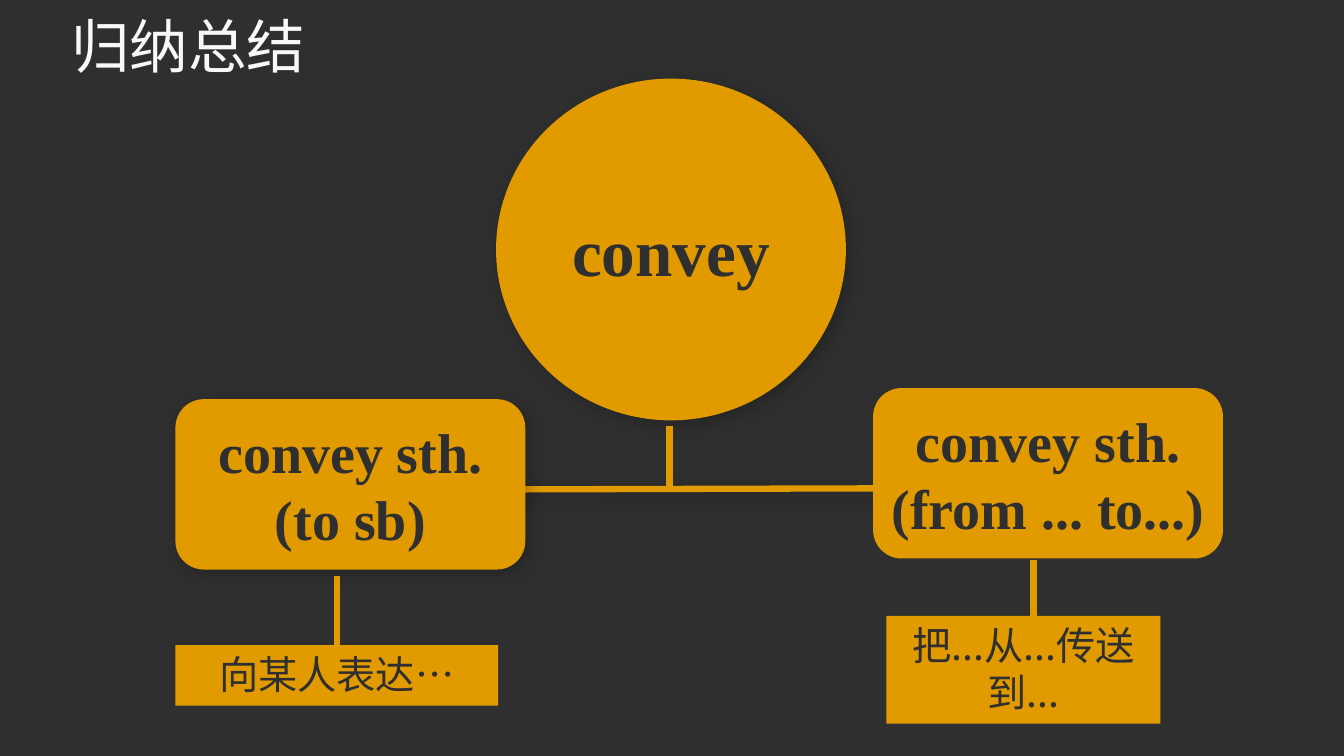
from lxml.etree import SubElement
from pptx import Presentation
from pptx.dml.color import RGBColor
from pptx.enum.shapes import MSO_CONNECTOR as CONN, MSO_SHAPE as SHAPE
from pptx.enum.text import MSO_ANCHOR as ANCHOR, MSO_AUTO_SIZE as AUTO, PP_ALIGN as ALIGN
from pptx.oxml.ns import qn
from pptx.util import Emu, Pt

PX = 9144  # 100 px to the inch
DARK, AMBER, PALE = "2F2F2F", "E19B01", "F8F8F8"
SANS, SERIF = "Noto Sans CJK SC", "Times New Roman"
HEADING = {"name": SANS, "size": Pt(41.8)}
TOPIC = {"name": SERIF, "size": Pt(48), "bold": True}
PHRASE = {"name": SERIF, "size": Pt(40), "bold": True}
MEANING = {"name": SANS, "size": Pt(28)}


def px(*lengths):
    return [Emu(n * PX) for n in lengths]


def rgb(color):
    return RGBColor.from_string(color)


def add_effects(parent, shadow):
    """Append an effect list, empty unless a soft shadow is wanted."""
    effects = SubElement(parent, qn("a:effectLst"))
    if shadow:
        outer = SubElement(effects, qn("a:outerShdw"), blurRad=str(Pt(12)),
                           dist=str(Pt(4)), dir=str(45 * 60000), algn="tl",
                           rotWithShape="0")
        color = SubElement(outer, qn("a:srgbClr"), val="000000")
        SubElement(color, qn("a:alpha"), val="22000")
    return effects


def write(tf, text, font, color, align=ALIGN.CENTER):
    tf.word_wrap = True
    p = tf.paragraphs[0]
    p.alignment = align
    r = p.add_run()
    r.text = text
    r.font.color.rgb = rgb(color)
    for key, value in font.items():
        setattr(r.font, key, value)
    SubElement(r.font._element, qn("a:ea"), typeface=font["name"])
    return p, r


def add_title(s, box, text):
    tf = s.shapes.add_textbox(*px(*box)).text_frame
    tf.vertical_anchor = ANCHOR.MIDDLE
    p, r = write(tf, text, HEADING, PALE, ALIGN.LEFT)
    p.line_spacing = 0.9
    rpr = r.font._element
    rpr.find(qn("a:solidFill")).addnext(add_effects(rpr, True))


def add_node(s, kind, box, text, font, shadow=False):
    sp = s.shapes.add_shape(kind, *px(*box))
    sp.fill.solid()
    sp.fill.fore_color.rgb = rgb(AMBER)
    sp.line.fill.background()
    add_effects(sp._element.spPr, shadow)
    tf = sp.text_frame
    tf.margin_left, tf.margin_right = px(8, 8)
    tf.vertical_anchor = ANCHOR.MIDDLE
    write(tf, text, font, DARK)
    return sp


def add_meaning(s, box, text):
    sp = add_node(s, SHAPE.RECTANGLE, box, text, MEANING)
    sp.text_frame.vertical_anchor = ANCHOR.TOP
    sp.text_frame.auto_size = AUTO.SHAPE_TO_FIT_TEXT
    return sp


def add_line(s, ends, shadow=False):
    line = s.shapes.add_connector(CONN.STRAIGHT, *px(*ends))
    line.line.color.rgb = rgb(AMBER)
    line.line.width = Pt(4.5)
    add_effects(line._element.spPr, shadow)
    return line


def main():
    prs = Presentation()
    prs.slide_width, prs.slide_height = px(1333, 750)
    s = prs.slides.add_slide(prs.slide_layouts[6])
    s.background.fill.solid()
    s.background.fill.fore_color.rgb = rgb(DARK)

    add_title(s, (61, 11, 1212, 76), "归纳总结")
    add_node(s, SHAPE.OVAL, (492, 78, 347, 339), "convey", TOPIC, True)
    add_line(s, (339, 486, 1044, 484), True)
    add_line(s, (664, 482, 664, 423))
    add_node(s, SHAPE.ROUNDED_RECTANGLE, (174, 396, 347, 169),
             "convey sth. (to sb)", PHRASE, True)
    add_node(s, SHAPE.ROUNDED_RECTANGLE, (866, 385, 347, 169),
             "convey sth. (from ... to...)", PHRASE)
    stem = add_line(s, (334, 640, 334, 571))
    add_line(s, (1025, 615, 1025, 556))
    express = add_meaning(s, (174, 640, 320, 60), "向某人表达…")
    stem.begin_connect(express, 0)
    add_meaning(s, (879, 611, 272, 107), "把...从...传送到...")
    prs.save("out.pptx")


if __name__ == "__main__":
    main()
